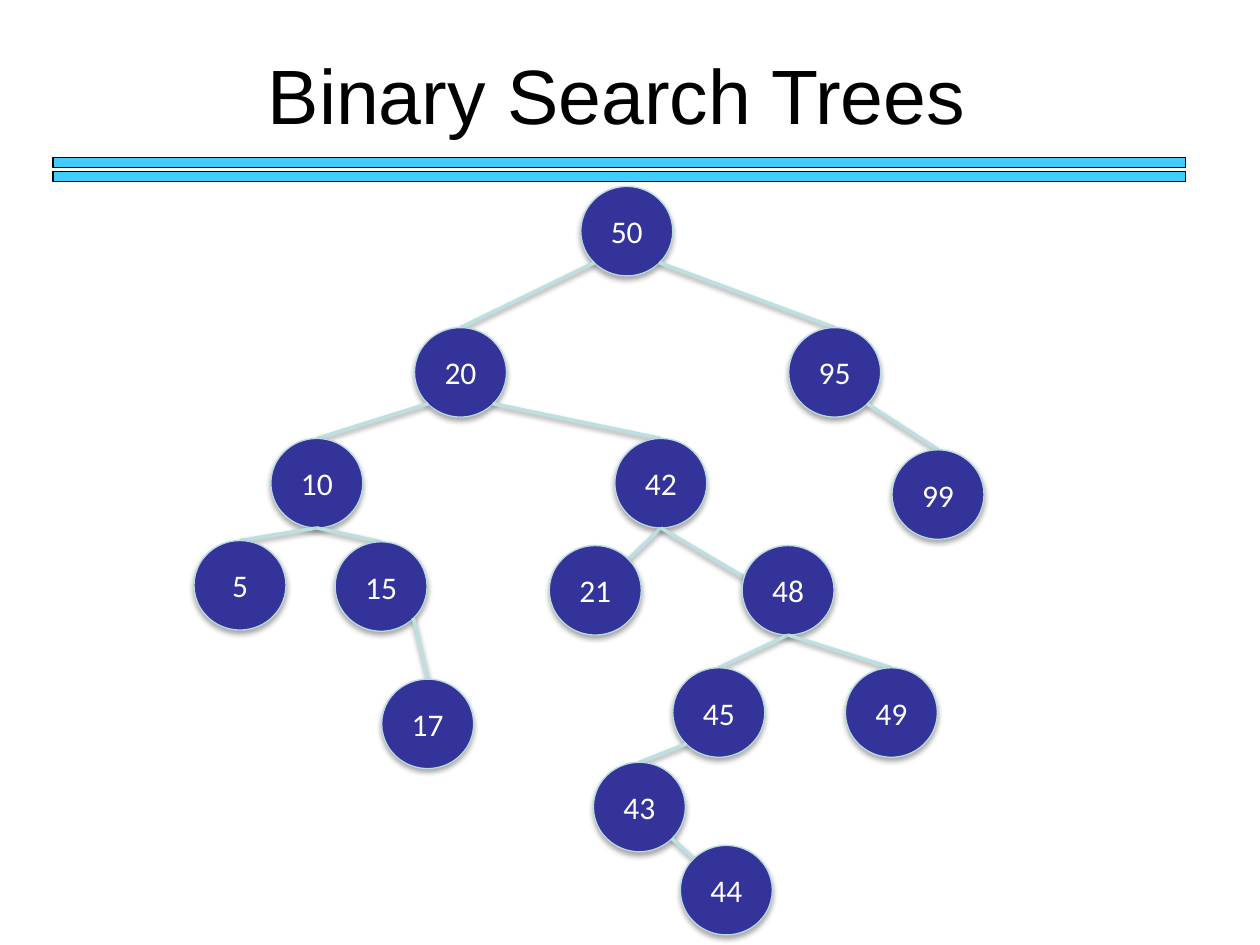
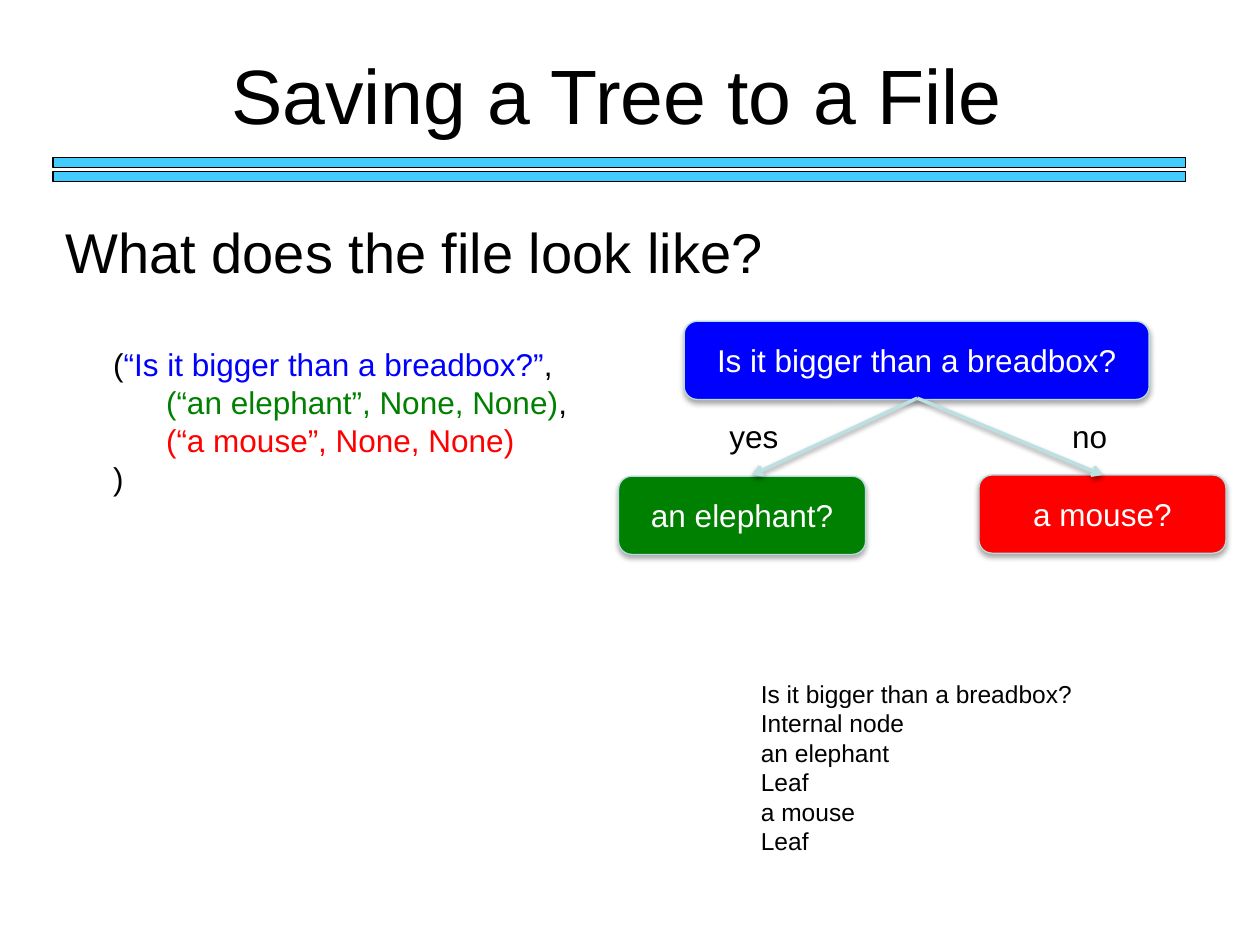
from lxml.etree import SubElement
from pptx import Presentation
from pptx.dml.color import RGBColor
from pptx.enum.shapes import MSO_CONNECTOR as LINE, MSO_SHAPE as SHAPE
from pptx.enum.text import MSO_ANCHOR as ANCHOR, MSO_AUTO_SIZE as AUTO, PP_ALIGN as ALIGN
from pptx.oxml.ns import qn
from pptx.util import Emu, Pt

PX = 9144
COLORS = {
    "black": "000000", "white": "FFFFFF", "band": "42CBFD", "node": "333399",
    "outline": "B7DBDE", "edge": "BCDFE2",
    "question": "0000FF", "yes": "008000", "no": "FF0000",
}
NODE_W, NODE_H = 73, 71
SITES = {
    "top": (0.5, 0), "bottom": (0.5, 1), "lower left": (0.15, 0.85),
    "lower right": (0.85, 0.85), "upper left": (0.15, 0.15),
    "inner left": (0.3, 0.52), "inner right": (0.71, 0.3),
}
# value: left, top, parent, site on parent, site on node
TREE = {
    50: (461, 148, None, None, None),
    20: (329, 260, 50, "lower left", "top"),
    95: (626, 260, 50, "lower right", "top"),
    10: (215, 348, 20, "lower left", "top"),
    42: (488, 348, 20, "lower right", "top"),
    99: (708, 357, 95, "lower right", "top"),
    5: (154, 429, 10, "bottom", "top"),
    15: (266, 430, 10, "bottom", "top"),
    21: (436, 433, 42, "bottom", "inner right"),
    48: (589, 433, 42, "bottom", "inner left"),
    17: (303, 539, 15, "lower right", "top"),
    45: (534, 530, 48, "bottom", "top"),
    49: (671, 530, 48, "bottom", "top"),
    43: (471, 605, 45, "lower left", "top"),
    44: (540, 671, 43, "lower right", "upper left"),
}


def px(*lengths):
    return [Emu(round(n * PX)) for n in lengths]


def rgb(name):
    return RGBColor.from_string(COLORS[name])


class Deck:
    """Holds the presentation, its style and the current slide."""

    def __init__(self):
        self.prs = Presentation()
        self.prs.slide_width, self.prs.slide_height = px(1000, 750)

    def slide(self, title):
        self.s = self.prs.slides.add_slide(self.prs.slide_layouts[6])
        self.heading(title, (42, 33, 899, 83), 44, ALIGN.CENTER, ANCHOR.MIDDLE)
        for top in (125, 136):
            self.shape(SHAPE.RECTANGLE, (42, top, 899, 8), "band", "black")

    def style(self, r, size, color="black", font="Arial"):
        r.font.size, r.font.name = Pt(size), font
        r.font.color.rgb = rgb(color)

    def shadow(self, sp, dist, alpha):
        pr = sp._element.spPr
        effects = pr.find(qn("a:effectLst"))
        if effects is None:
            effects = SubElement(pr, qn("a:effectLst"))
        outer = SubElement(effects, qn("a:outerShdw"), blurRad="40000", dist=str(dist),
                           dir="5400000", rotWithShape="0")
        color = SubElement(outer, qn("a:srgbClr"), val=COLORS["black"])
        SubElement(color, qn("a:alpha"), val=str(alpha * 1000))

    def shape(self, kind, box, fill, line):
        sp = self.s.shapes.add_shape(kind, *px(*box))
        sp.shadow.inherit = False
        sp.fill.solid()
        sp.fill.fore_color.rgb = rgb(fill)
        sp.line.color.rgb = rgb(line)
        sp.line.width = Pt(0.75)
        return sp

    def label(self, kind, box, text, fill, font="Arial"):
        sp = self.shape(kind, box, fill, "outline")
        self.shadow(sp, 23000, 35)
        tf = sp.text_frame
        tf.text = text
        tf.vertical_anchor = ANCHOR.MIDDLE
        p = tf.paragraphs[0]
        p.alignment = ALIGN.CENTER
        self.style(p.runs[0], 18, "white", font)

    def edge(self, start, end, arrow=False):
        c = self.s.shapes.add_connector(LINE.STRAIGHT, *px(*start, *end))
        c.line.color.rgb = rgb("edge")
        c.line.width = Pt(2)
        if arrow:
            SubElement(c.line._ln, qn("a:tailEnd"), type="arrow")
        self.shadow(c, 20000, 38)

    def heading(self, text, box, size, align=ALIGN.LEFT, anchor=ANCHOR.TOP):
        tf = self.s.shapes.add_textbox(*px(*box)).text_frame
        tf.word_wrap = True
        tf.vertical_anchor = anchor
        tf.margin_left, tf.margin_top, tf.margin_right, tf.margin_bottom = px(6, 6, 10, 6)
        tf.text = text
        p = tf.paragraphs[0]
        p.alignment = align
        self.style(p.runs[0], size)
        return p

    def text(self, box, lines, size=18, wrap=False):
        """Each line is an indent followed by (text, colour) runs."""
        tf = self.s.shapes.add_textbox(*px(*box)).text_frame
        tf.word_wrap = wrap
        tf.auto_size = AUTO.SHAPE_TO_FIT_TEXT
        for i, (indent, *runs) in enumerate(lines):
            p = tf.add_paragraph() if i else tf.paragraphs[0]
            if indent:
                p._p.get_or_add_pPr().set("marL", str(indent * PX))
            for words, color in runs:
                r = p.add_run()
                r.text = words
                self.style(r, size, color)


def site(value, name):
    left, top = TREE[value][:2]
    fx, fy = SITES[name]
    return left + fx * NODE_W, top + fy * NODE_H


def search_tree(deck):
    deck.slide("Binary Search Trees")
    for value, (left, top, parent, start, end) in TREE.items():
        if parent:
            deck.edge(site(parent, start), site(value, end))
        deck.label(SHAPE.OVAL, (left, top, NODE_W, NODE_H), str(value), "node", "Calibri")


def saved_tree(deck):
    deck.slide("Saving a Tree to a File")
    p = deck.heading("What does the file look like?", (42, 167, 902, 533), 32)
    p.space_before = Pt(7)
    p._p.get_or_add_pPr().set("marL", str(4 * PX))

    question = "Is it bigger than a breadbox?"
    for left, top, width, text, fill in (
        (543, 255, 369, question, "question"),
        (491, 378, 196, "an elephant?", "yes"),
        (777, 377, 196, "a mouse?", "no"),
    ):
        deck.label(SHAPE.ROUNDED_RECTANGLE, (left, top, width, 62), text, fill)
    for x in (597, 875):
        deck.edge((728, 316), (x, 377), arrow=True)
    for left, width, answer in ((569, 59, "yes"), (841, 48, "no")):
        deck.text((left, 326, width, 40), [(0, (answer, "black"))])

    saved = (question, "Internal node", "an elephant", "Leaf", "a mouse", "Leaf")
    deck.text((594, 534, 268, 151), [(0, (line, "black")) for line in saved], 14, True)
    deck.text((80, 269, 383, 131), [
        (0, ("(", "black"), (f"“{question}”", "question"), (",", "black")),
        (42, ("(“an elephant”, None, None)", "yes"), (",", "black")),
        (42, ("(“a mouse”, None, None)", "no")),
        (0, (")", "black")),
    ])


def main():
    deck = Deck()
    search_tree(deck)
    saved_tree(deck)
    deck.prs.save("out.pptx")


if __name__ == "__main__":
    main()
